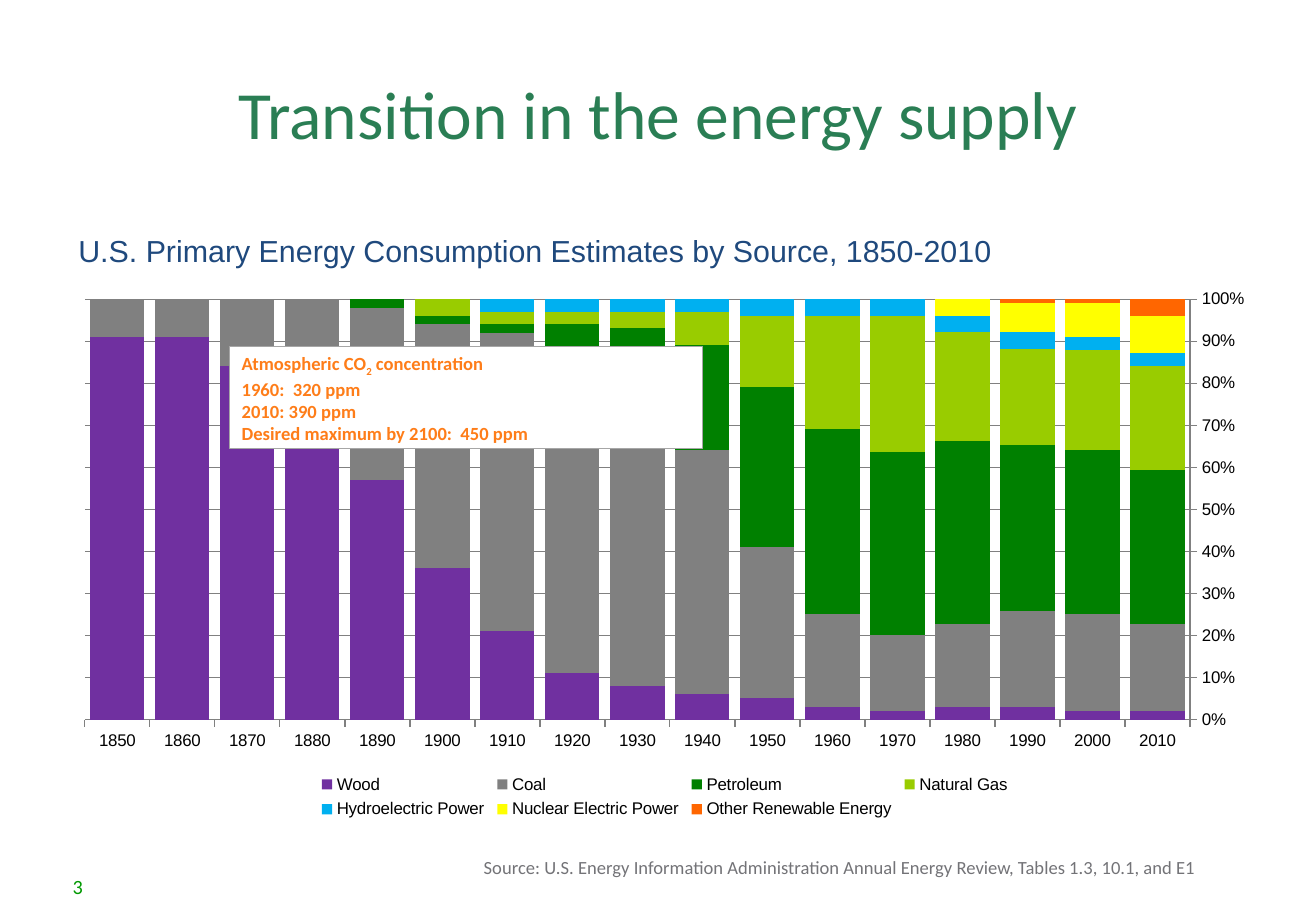
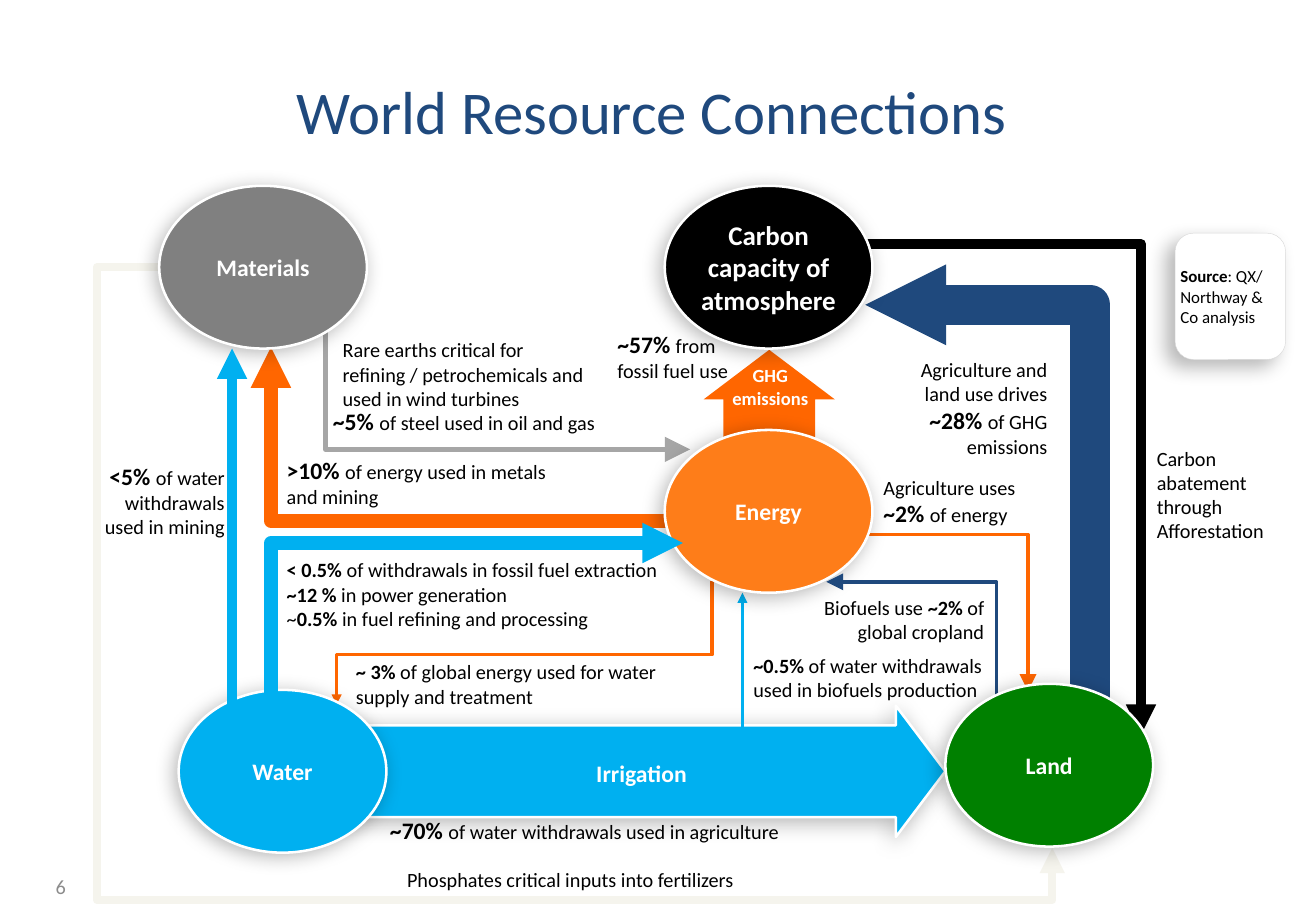
from dataclasses import dataclass
from lxml import etree
from pptx import Presentation
from pptx import util as u
from pptx.chart import data as chart_data
from pptx.dml import color
from pptx.enum import chart as charts, shapes, text
from pptx.oxml import ns


@dataclass(frozen=True)
class Theme:
    font: str = "Calibri"
    chart_font: str = "Arial"
    white: str = "FFFFFF"
    black: str = "000000"
    green: str = "2A7E54"
    navy: str = "1F497D"
    amber: str = "FE7D19"
    orange: str = "FF6600"
    sky: str = "00B0F0"
    forest: str = "008000"
    gray: str = "808080"
    silver: str = "A6A6A6"
    ivory: str = "F5F4ED"
    small: int = 10
    note: int = 11
    body: int = 12
    strong: int = 14
    node: int = 16


@dataclass(frozen=True)
class Box:
    left: float
    top: float
    width: float
    height: float

    def inside(self, left, top, width, height):
        return Box(self.left + left, self.top + top, width, height)

    def inches(self):
        return [u.Inches(n) for n in (self.left, self.top, self.width, self.height)]


@dataclass(frozen=True)
class Label:
    place: tuple
    lines: tuple
    align: str = "LEFT"
    strong: int = 14
    size: int = 12
    color: str = "000000"
    bold: bool = False


THEME = Theme()
PAGE = Box(0, 0, 10.83, 7.5)


def rgb(value):
    return color.RGBColor.from_string(value)


def child(parent, tag, **attributes):
    return etree.SubElement(parent, ns.qn(tag), {k: str(v) for k, v in attributes.items()})


def write(shape, lines, size, ink, align="LEFT", anchor="TOP", bold=False,
          strong=None, insets=(0, 0, 0, 0), wrap=True):
    frame = shape.text_frame
    frame.word_wrap = wrap
    frame.vertical_anchor = getattr(text.MSO_ANCHOR, anchor)
    (frame.margin_left, frame.margin_top,
     frame.margin_right, frame.margin_bottom) = [u.Inches(n) for n in insets]
    for index, line in enumerate(lines):
        para = frame.add_paragraph() if index else frame.paragraphs[0]
        para.alignment = getattr(text.PP_ALIGN, align)
        para.font.name = THEME.font
        para.font.size = u.Pt(size)
        para.font.bold = bold
        para.font.color.rgb = rgb(ink)
        for position, piece in enumerate(line.split("*")):
            if piece:
                span = para.add_run()
                span.text = piece
                if position % 2 and strong:
                    span.font.bold = True
                    span.font.size = u.Pt(strong)
    return frame


def add_text(page, box, lines, size, ink, **style):
    return write(page.shapes.add_textbox(*box.inches()), lines, size, ink, **style)


def add_block(page, kind, box, fill, line=None, width=1.5, shadow=None):
    shape = page.shapes.add_shape(kind, *box.inches())
    shape.shadow.inherit = False
    shape.fill.solid()
    shape.fill.fore_color.rgb = rgb(fill)
    if line:
        shape.line.color.rgb = rgb(line)
        shape.line.width = u.Pt(width)
    else:
        shape.line.fill.background()
    if shadow:
        effects = shape._element.spPr.find(ns.qn("a:effectLst"))
        outer = child(effects, "a:outerShdw", blurRad=u.Pt(11.8), dist=u.Pt(shadow),
                      dir=141 * 60000, algn="ctr", rotWithShape=0)
        child(child(outer, "a:srgbClr", val=THEME.black), "a:alpha", val=28000)
    return shape


def add_flow(page, box, points, ink, width, head="med"):
    spots = [(u.Inches(box.left + x), u.Inches(box.top + y)) for x, y in points]
    if len(spots) == 2:
        shape = page.shapes.add_connector(shapes.MSO_CONNECTOR.STRAIGHT, *spots[0], *spots[1])
        child(shape._element.spPr, "a:effectLst")
    else:
        builder = page.shapes.build_freeform(*spots[0], scale=1.0)
        builder.add_line_segments(spots[1:], close=False)
        shape = builder.convert_to_shape()
        shape.fill.background()
        shape.shadow.inherit = False
    shape.line.color.rgb = rgb(ink)
    shape.line.width = u.Pt(width)
    outline = shape._element.spPr.find(ns.qn("a:ln"))
    child(outline, "a:round")
    child(outline, "a:tailEnd", type="triangle", w=head, len=head)


def add_frame(deck, title, title_box, size, ink, number, number_box, number_ink):
    page = deck.slides.add_slide(deck.slide_layouts[6])
    add_text(page, title_box, [title], size, ink, align="CENTER", anchor="MIDDLE")
    add_text(page, number_box, [number], THEME.body, number_ink, align="RIGHT",
             anchor="MIDDLE", insets=(0, 0, 0.1, 0))
    return page


def set_layout(element, position, inner=False, **shares):
    for old in element.findall(ns.qn("c:layout")):
        element.remove(old)
    layout = etree.Element(ns.qn("c:layout"))
    manual = child(layout, "c:manualLayout")
    if inner:
        child(manual, "c:layoutTarget", val="inner")
    for name in ("x", "y"):
        child(manual, f"c:{name}Mode", val="edge")
    for name, share in shares.items():
        child(manual, f"c:{name}", val=share)
    element.insert(position, layout)


SOURCES = [
    ("Wood", "7030A0", [2, 2, 3, 3, 2, 3, 5, 6, 8, 11, 21, 36, 57, 73, 84, 91, 91]),
    ("Coal", THEME.gray, [21, 23, 23, 20, 18, 22, 36, 58, 73, 77, 71, 58, 41, 27, 16, 9, 9]),
    ("Petroleum", THEME.forest, [37, 39, 40, 44, 43, 44, 38, 25, 13, 6, 2, 2, 2, 0, 0]),
    ("Natural Gas", "99CC00", [25, 24, 23, 26, 32, 27, 17, 8, 4, 3, 3, 4]),
    ("Hydroelectric Power", THEME.sky, [3, 3, 4, 4, 4, 4, 4, 3, 3, 3, 3, 0]),
    ("Nuclear Electric Power", "FFFF00", [9, 8, 7, 4, 0, 0]),
    ("Other Renewable Energy", THEME.orange, [4, 1, 1, 0, 0, 0]),
]


def add_energy_chart(page, box):
    years = [str(year) for year in range(2010, 1849, -10)]
    data = chart_data.CategoryChartData()
    data.categories = years
    for name, _, values in SOURCES:
        data.add_series(name, values + [None] * (len(years) - len(values)))
    chart = page.shapes.add_chart(charts.XL_CHART_TYPE.COLUMN_STACKED_100,
                                  *box.inches(), data).chart
    chart.font.name = THEME.chart_font
    chart.font.size = u.Pt(THEME.small)
    chart.font.color.rgb = rgb(THEME.black)
    plot = chart.plots[0]
    plot.gap_width, plot.overlap, plot.vary_by_categories = 20, 100, False
    for series, (_, ink, _) in zip(plot.series, SOURCES):
        series.format.fill.solid()
        series.format.fill.fore_color.rgb = rgb(ink)
    chart.category_axis.reverse_order = True
    values_axis = chart.value_axis
    values_axis.maximum_scale, values_axis.minimum_scale = 1, 0
    values_axis.major_unit = 0.1
    values_axis.tick_labels.number_format = "0%"
    values_axis.tick_labels.number_format_is_linked = False
    values_axis.has_major_gridlines = True
    for axis in (chart.category_axis, values_axis):
        axis.major_tick_mark = charts.XL_TICK_MARK.OUTSIDE
        axis.format.line.color.rgb = rgb(THEME.gray)
    values_axis.major_gridlines.format.line.color.rgb = rgb(THEME.gray)
    heading = chart.chart_title.text_frame
    heading.text = "U.S. Primary Energy Consumption Estimates by Source, 1850-2010"
    font = heading.paragraphs[0].font
    font.name, font.size, font.bold = THEME.chart_font, u.Pt(18), False
    font.color.rgb = rgb(THEME.navy)
    chart.has_legend = True
    chart.legend.position = charts.XL_LEGEND_POSITION.BOTTOM
    chart.legend.include_in_layout = False
    set_layout(chart.chart_title._element, 1, x=0.01, y=0.03)
    set_layout(chart.legend._element, 1, x=0.21, y=0.91, w=0.58, h=0.09)
    set_layout(chart._chartSpace.chart.plotArea, 0, inner=True, x=0.02, y=0.15, w=0.915, h=0.68)


def add_carbon_note(page, box):
    note = add_block(page, shapes.MSO_SHAPE.RECTANGLE, box, THEME.white, THEME.silver, 0.5)
    frame = write(note, ["Atmospheric CO*2* concentration", "1960:  320 ppm", "2010: 390 ppm",
                         "Desired maximum by 2100:  450 ppm"],
                  THEME.note, THEME.amber, bold=True, insets=(0.1, 0.05, 0.1, 0.05))
    frame.paragraphs[0].runs[1]._r.get_or_add_rPr().set("baseline", "-25000")


def energy_slide(deck):
    page = add_frame(deck, "Transition in the energy supply", Box(0.54, 0.3, 9.75, 1.25), 40,
                     THEME.green, "3", Box(0.34, 7.14, 0.44, 0.31), "009900")
    add_energy_chart(page, Box(0.5, 1.7, 9.94, 5.09))
    add_text(page, Box(1.61, 7, 8.33, 0.29),
             ["Source: U.S. Energy Information Administration Annual Energy Review, "
              "Tables 1.3, 10.1, and E1"],
             THEME.note, "737377", align="RIGHT", insets=(0.1, 0.05, 0.1, 0.05))
    add_carbon_note(page, Box(1.89, 2.85, 3.89, 0.84))


BACK_FLOWS = [
    ([(1.3, 2.2), (0.8, 2.2), (0.8, 7.41), (8.66, 7.41), (8.66, 6.98)], THEME.ivory, 5),
    ([(2.68, 2.34), (2.68, 3.7), (5.68, 3.7)], THEME.silver, 3, "lg"),
    ([(5.63, 4.29), (2.23, 4.29), (2.23, 2.86)], THEME.orange, 8),
    ([(6.11, 6.05), (6.11, 4.88)], THEME.sky, 1.5),
    ([(5.86, 4.78), (5.86, 5.39), (2.77, 5.39), (2.77, 5.8)], THEME.orange, 2),
    ([(8.97, 6.08), (8.97, 2.51), (7.12, 2.51)], THEME.navy, 24, "sm"),
    ([(6.49, 4.4), (8.46, 4.4), (8.46, 5.69)], THEME.orange, 2, "lg"),
    ([(6.69, 2.01), (9.39, 2.01), (9.39, 6.05)], THEME.black, 6),
]
FRONT_FLOWS = [
    ([(2.23, 6.19), (2.23, 4.47), (5.62, 4.47)], THEME.sky, 8),
    ([(8.2, 5.9), (8.2, 4.79), (6.8, 4.79)], THEME.navy, 2, "lg"),
    ([(1.91, 5.8), (1.91, 2.87)], THEME.sky, 6),
]
NODES = [
    (5.47, 3.54, THEME.amber, ["Energy"], THEME.strong),
    (1.47, 5.68, THEME.sky, ["Water"], THEME.strong),
    (5.47, 1.53, THEME.black, ["Carbon", "capacity of", "atmosphere"], THEME.node),
    (1.31, 1.53, THEME.gray, ["Materials"], THEME.strong),
]
LAND = (7.78, 5.63, THEME.forest, ["Land"], THEME.strong)
LABELS = [
    Label((4.78, 6.25, 1, 0.24), ("Irrigation",), "CENTER", size=14, color=THEME.white, bold=True),
    Label((5.84, 3, 1, 0.37), ("GHG", "emissions"), "CENTER", size=11, color=THEME.white, bold=True),
    Label((2.93, 5.43, 2.94, 0.4),
          ("*~ 3% *of global energy used for water supply and treatment",), strong=12),
    Label((6.69, 4.9, 1.41, 0.42), ("Biofuels use *~2%* of global cropland",), "RIGHT", 12),
    Label((7.26, 2.94, 1.36, 0.84),
          ("Agriculture and land use drives", "*~28% *of GHG emissions"), "RIGHT"),
    Label((9.52, 3.67, 1.06, 0.81), ("Carbon abatement through", "Afforestation")),
    Label((3.21, 6.72, 3.5, 0.24), ("*~70% *of water withdrawals used in agriculture",)),
    Label((2.36, 4.59, 3.53, 0.61),
          ("*< 0.5% *of withdrawals in fossil fuel extraction", "*~12 % *in power generation",
           "~*0.5% *in fuel refining and processing"), strong=12),
    Label((2.36, 3.75, 2.3, 0.44), ("*>10% *of energy used in metals and mining",)),
    Label((2.74, 3.35, 2.83, 0.24), ("*~5% *of steel used in oil and gas",)),
    Label((7.27, 3.91, 1.5, 0.44), ("Agriculture uses", "*~2% *of energy")),
    Label((0.81, 3.8, 1.04, 0.64), ("*<5% *of water withdrawals used in mining",), "RIGHT"),
    Label((3.35, 7.14, 3, 0.2), ("Phosphates critical inputs into fertilizers",)),
    Label((2.82, 2.78, 2.04, 0.61),
          ("Rare earths critical for refining / petrochemicals and used in wind turbines",)),
    Label((5.08, 2.72, 1.08, 0.44), ("*~57% *from fossil fuel use",)),
    Label((6.2, 5.38, 2, 0.4),
          ("*~0.5% *of water withdrawals used in biofuels production",), strong=12),
]


def add_node(page, box, left, top, fill, lines, size):
    node = add_block(page, shapes.MSO_SHAPE.OVAL, box.inside(left, top, 1.71, 1.34),
                     fill, THEME.white, shadow=3)
    write(node, lines, size, THEME.white, align="CENTER", anchor="MIDDLE", bold=True, wrap=False)


def add_resource_map(page, box):
    emissions = add_block(page, shapes.MSO_SHAPE.UP_ARROW, box.inside(5.79, 2.88, 1.08, 0.98),
                          THEME.orange)
    irrigation = add_block(page, shapes.MSO_SHAPE.RIGHT_ARROW, box.inside(2.14, 5.81, 5.64, 1.08),
                           THEME.sky, THEME.white, shadow=3)
    for arrow, depth in ((emissions, 0.417), (irrigation, 0.377)):
        arrow.adjustments[0], arrow.adjustments[1] = 0.7, depth
    for flow in BACK_FLOWS:
        add_flow(page, box, *flow)
    for node in NODES:
        add_node(page, box, *node)
    for flow in FRONT_FLOWS:
        add_flow(page, box, *flow)
    add_node(page, box, *LAND)
    for label in LABELS:
        add_text(page, box.inside(*label.place), label.lines, label.size, label.color,
                 align=label.align, strong=label.strong, bold=label.bold)


def add_source_card(page, box):
    card = add_block(page, shapes.MSO_SHAPE.ROUNDED_RECTANGLE, box, THEME.white, "D9D9D9", 0.25, 7)
    write(card, ["*Source*: QX/ Northway & Co analysis"], THEME.small, THEME.black,
          anchor="MIDDLE", strong=THEME.small)


def resources_slide(deck):
    page = add_frame(deck, "World Resource Connections", Box(1.14, 0.39, 8.45, 1.03), 36,
                     THEME.navy, "6", Box(0.34, 7.14, 0.3, 0.31), "8C8C8C")
    add_resource_map(page, PAGE)
    add_source_card(page, Box(9.67, 1.92, 0.91, 1.04))


def main():
    deck = Presentation()
    deck.slide_width, deck.slide_height = u.Inches(PAGE.width), u.Inches(PAGE.height)
    energy_slide(deck)
    resources_slide(deck)
    deck.save("out.pptx")


if __name__ == "__main__":
    main()
